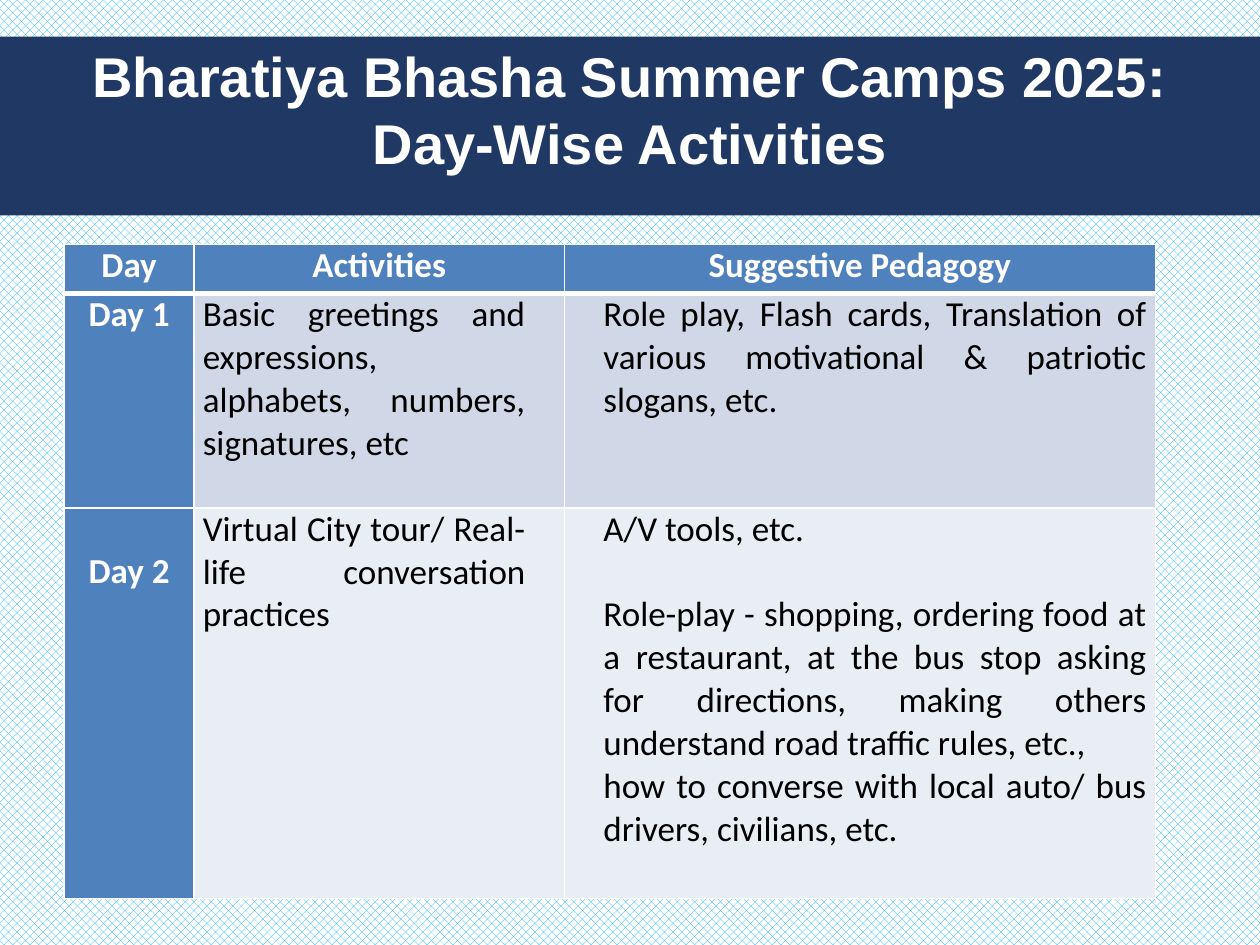
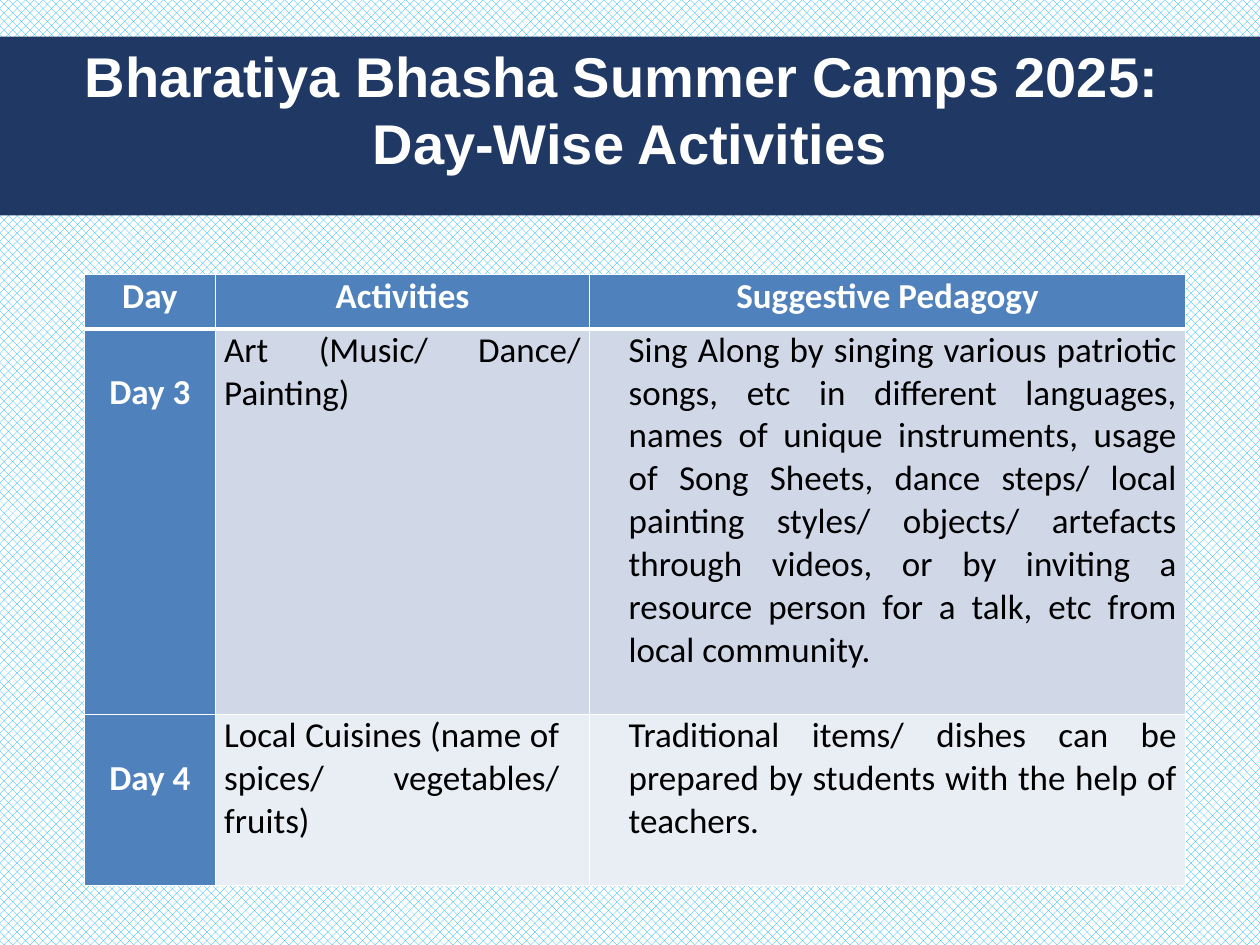
import pptx
import pptx.util
import pptx.dml.color
import pptx.enum.dml
import pptx.enum.shapes
import pptx.enum.text
import pptx.oxml
import pptx.oxml.ns

ALIGN = pptx.enum.text.PP_ALIGN
NAVY, BLUE, SKY, WHITE, BLACK = "1F3864", "4F81BD", "00B0F0", "FFFFFF", "000000"
BANDS = ["D0D8E8", "E9EDF4"]
TITLE = dict(size=pptx.util.Pt(32), name="Arial", bold=True)
HEAD = dict(size=pptx.util.Pt(20), name="Calibri", bold=True)
BODY = dict(HEAD, bold=False)
LINE = 24.4  # height of one 20 pt line, in points


def rgb(code):
    return pptx.dml.color.RGBColor.from_string(code)


class Deck:
    """Holds the style and the current slide; a grid unit is 1/100 of the width."""

    def __init__(self):
        self.prs = pptx.Presentation()
        self.prs.slide_width = pptx.util.Inches(10)
        self.prs.slide_height = pptx.util.Inches(7.5)

    def u(self, units):
        return int(self.prs.slide_width * units / 100)

    def slide(self):
        self.s = self.prs.slides.add_slide(self.prs.slide_layouts[6])
        fill = self.s.background.fill
        fill.patterned()
        fill.pattern = pptx.enum.dml.MSO_PATTERN.PERCENT_50
        fill.fore_color.rgb = rgb(SKY)
        fill.back_color.rgb = rgb(WHITE)

    def text(self, tf, lines, font, color, align, **layout):
        for i, line in enumerate(lines):
            p = tf.paragraphs[0] if i == 0 else tf.add_paragraph()
            p.alignment = align
            r = p.add_run()
            r.text = line
            for key, value in font.items():
                setattr(r.font, key, value)
            r.font.color.rgb = rgb(color)
            pPr = p._p.get_or_add_pPr()
            for key, value in layout.items():
                pPr.set(key, str(self.u(value)))

    def margins(self, target, **sides):
        for side, units in sides.items():
            setattr(target, "margin_" + side, self.u(units))

    def title(self, lines):
        sp = self.s.shapes.add_shape(pptx.enum.shapes.MSO_SHAPE.RECTANGLE,
                                     0, self.u(2.9), self.u(100), self.u(14.2))
        sp.shadow.inherit = False
        sp.fill.solid()
        sp.fill.fore_color.rgb = rgb(NAVY)
        sp.line.fill.background()
        tf = sp.text_frame
        tf.word_wrap = True
        tf.vertical_anchor = pptx.enum.text.MSO_ANCHOR.TOP
        self.margins(tf, left=0.7, top=0.4, right=0.7, bottom=0.4)
        self.text(tf, lines, TITLE, WHITE, ALIGN.CENTER)

    def cell(self, cell, fill, top=1, bottom=1, drop=0):
        self.margins(cell, left=0.7, right=0.7, top=drop, bottom=0)
        cell.fill.solid()
        cell.fill.fore_color.rgb = rgb(fill)
        tcPr = cell._tc.get_or_add_tcPr()
        for i, (side, width) in enumerate(dict(L=1, R=1, T=top, B=bottom).items()):
            tcPr.insert(i, pptx.oxml.parse_xml(
                f'<a:ln{side} {pptx.oxml.ns.nsdecls("a")} w="{pptx.util.Pt(width)}">'
                f'<a:solidFill><a:srgbClr val="{WHITE}"/></a:solidFill></a:ln{side}>'))
        return cell.text_frame

    def table(self, left, top, cols, rows, days):
        tb = self.s.shapes.add_table(len(rows), len(cols), self.u(left), self.u(top),
                                     self.u(sum(cols)), self.u(sum(rows))).table
        for col, width in zip(tb.columns, cols):
            col.width = self.u(width)
        for row, height in zip(tb.rows, rows):
            row.height = self.u(height)

        # Header row
        for c, label in enumerate(["Day", "Activities", "Suggestive Pedagogy"]):
            tf = self.cell(tb.cell(0, c), BLUE, bottom=3)
            self.text(tf, [label], HEAD, WHITE, ALIGN.CENTER)

        # One row per day
        for i, (day, drop, activity, indent, pedagogy) in enumerate(days, 1):
            top_line, band = (3 if i == 1 else 1), BANDS[i - 1]
            tf = self.cell(tb.cell(i, 0), BLUE, top_line, drop=drop)
            self.text(tf, [day], HEAD, WHITE, ALIGN.CENTER)
            tf = self.cell(tb.cell(i, 1), band, top_line)
            self.text(tf, [activity], BODY, BLACK, ALIGN.JUSTIFY, marR=indent)
            tf = self.cell(tb.cell(i, 2), band, top_line)
            self.text(tf, pedagogy, BODY, BLACK, ALIGN.JUSTIFY, marL=2.4)
            if len(pedagogy) > 1:
                tf.paragraphs[0].space_after = pptx.util.Pt(LINE)


DROP = LINE / 7.2  # one line down, in grid units

# Each day: label, drop, activity, right indent, pedagogy
SLIDES = [
    ("Bharatiya Bhasha Summer Camps 2025:",
     dict(left=5.1, top=19.4, cols=[10.3, 29.4, 46.9], rows=[3.9, 17, 31], days=[
         ("Day 1", 0,
          "Basic greetings and expressions, alphabets, numbers, signatures, etc", 2.4,
          ["Role play, Flash cards, Translation of various motivational & patriotic "
           "slogans, etc."]),
         ("Day 2", DROP, "Virtual City tour/ Real-life conversation practices ", 2.4,
          ["A/V tools, etc.",
           "Role-play - shopping, ordering food at a restaurant, at the bus stop asking "
           "for directions, making others understand road traffic rules, etc., ",
           "how to converse with local auto/ bus drivers, civilians, etc."]),
     ])),
    ("Bharatiya Bhasha Summer Camps 2025: ",
     dict(left=6.7, top=21.8, cols=[10.4, 29.7, 47.3], rows=[4.3, 30.6, 13.6], days=[
         ("Day 3", DROP, "Art (Music/ Dance/ Painting)", 0,
          ["Sing Along by singing various patriotic songs, etc in different languages, "
           "names of unique instruments, usage of Song Sheets, dance steps/ local "
           "painting styles/ objects/ artefacts through videos, or by inviting a "
           "resource person for a talk, etc from local community."]),
         ("Day 4", DROP, "Local Cuisines (name of spices/ vegetables/ fruits)", 1.7,
          ["Traditional items/ dishes can be prepared by students with the help of "
           "teachers."]),
     ])),
]


def main():
    deck = Deck()
    for heading, schedule in SLIDES:
        deck.slide()
        deck.title([heading, "Day-Wise Activities"])
        deck.table(**schedule)
    deck.prs.save("out.pptx")


if __name__ == "__main__":
    main()
